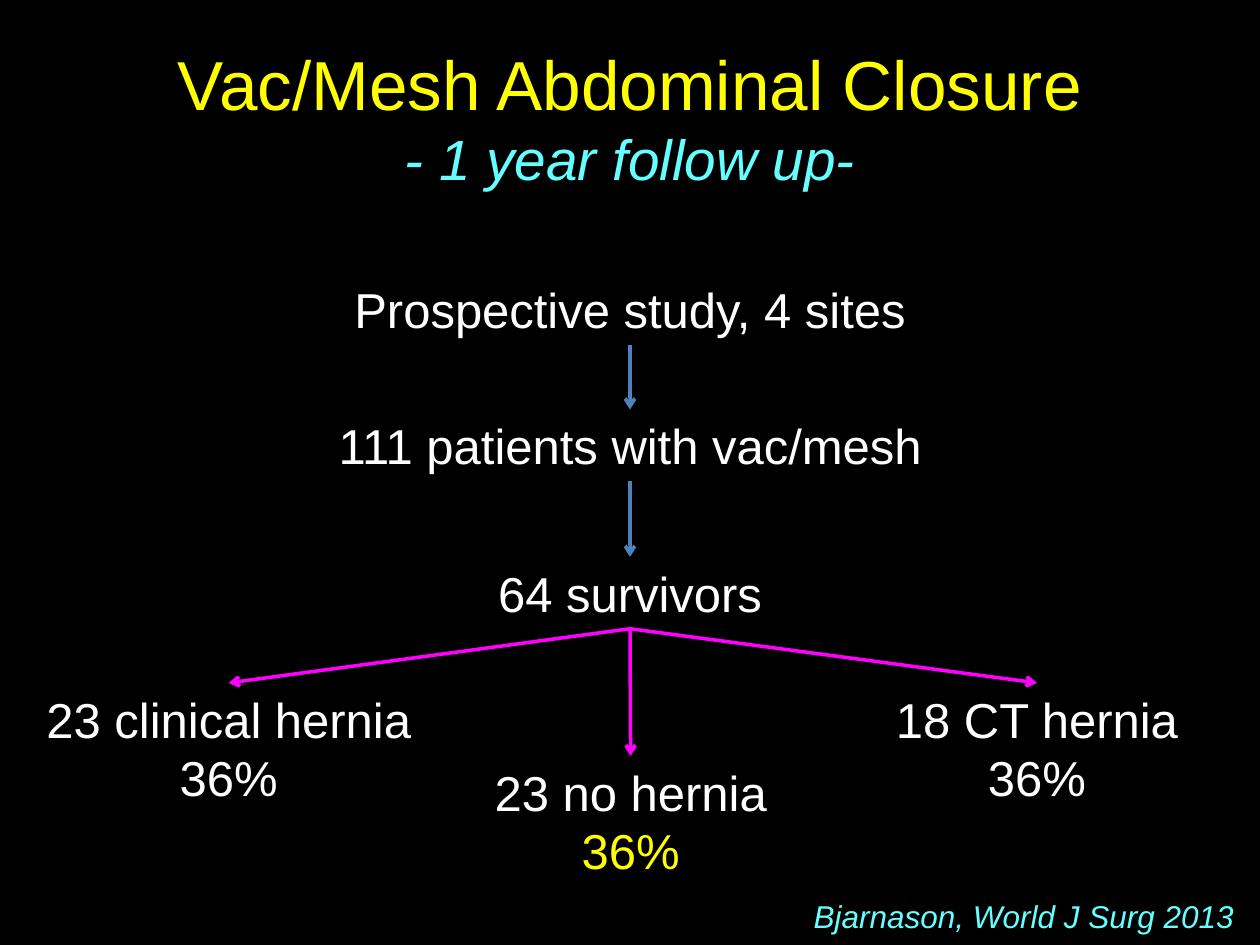
from dataclasses import dataclass

from lxml import etree
from pptx import Presentation
from pptx.dml.color import RGBColor
from pptx.enum import shapes, text
from pptx.oxml import ns
from pptx.util import Inches, Pt

WHITE, YELLOW, CYAN = "FFFFFF", "FFFF00", "66FFFF"
BLUE, MAGENTA = "4F81BD", "FF00FF"
TOP, BOTTOM = 0, 2
CENTER, LEFT = text.PP_ALIGN.CENTER, text.PP_ALIGN.LEFT


@dataclass(frozen=True)
class Run:
    text: str
    size: float = 28
    color: str = WHITE
    italic: bool = False


@dataclass(frozen=True)
class Box:
    left: float
    top: float
    width: float
    height: float
    paragraphs: tuple  # each paragraph is a tuple of runs, one per line
    wrap: bool = True
    align: text.PP_ALIGN = CENTER
    anchor: text.MSO_ANCHOR = text.MSO_ANCHOR.TOP
    auto_size: text.MSO_AUTO_SIZE = text.MSO_AUTO_SIZE.SHAPE_TO_FIT_TEXT


def rgb(color: str) -> RGBColor:
    return RGBColor.from_string(color)


def add_box(s, box: Box):
    sp = s.shapes.add_textbox(Inches(box.left), Inches(box.top),
                              Inches(box.width), Inches(box.height))
    tf = sp.text_frame
    settings = {"word_wrap": box.wrap, "vertical_anchor": box.anchor,
                "auto_size": box.auto_size}
    for name, value in settings.items():
        setattr(tf, name, value)
    for i, runs in enumerate(box.paragraphs):
        p = tf.add_paragraph() if i else tf.paragraphs[0]
        p.alignment = box.align
        for j, run in enumerate(runs):
            if j:
                p.add_line_break()
            r = p.add_run()
            r.text = run.text
            font = {"name": "Arial", "size": Pt(run.size), "italic": run.italic}
            for name, value in font.items():
                setattr(r.font, name, value)
            r.font.color.rgb = rgb(run.color)
    return sp


def add_arrow(s, start, end, color: str) -> None:
    """Join the bottom of one box to the top of another."""
    c = s.shapes.add_connector(shapes.MSO_CONNECTOR.STRAIGHT, 0, 0, 0, 0)
    c.begin_connect(start, BOTTOM)
    c.end_connect(end, TOP)
    c.line.color.rgb = rgb(color)
    c.line.width = Pt(2)
    etree.SubElement(c.line._get_or_add_ln(), ns.qn("a:tailEnd"), type="arrow")
    etree.SubElement(c._element.spPr, ns.qn("a:effectLst"))


def step(top: float, label: str) -> Box:
    return Box(0, top, 10, 0.57, ((Run(label),),))


def outcome(left: float, top: float, width: float, label: str,
            color: str = WHITE) -> Box:
    return Box(left, top, width, 1.04,
               ((Run(label),), (Run("36%", color=color),)), wrap=False)


TITLE = Box(0.5, 0.3, 9, 1.25,
            ((Run("Vac/Mesh Abdominal Closure", 39.6, YELLOW),
              Run("- 1 year follow up-", 32.4, CYAN, True)),),
            anchor=text.MSO_ANCHOR.MIDDLE, auto_size=text.MSO_AUTO_SIZE.NONE)
CITATION = Box(6.36, 7.07, 3.63, 0.4,
               ((Run("Bjarnason, World J Surg 2013", 18, CYAN, True),),),
               wrap=False, align=LEFT)
STEPS = (
    step(2.17, "Prospective study, 4 sites"),
    step(3.25, "111 patients with vac/mesh"),
    step(4.42, "64 survivors"),
)
OUTCOMES = (
    outcome(0.25, 5.42, 3.13, "23 clinical hernia"),
    outcome(3.81, 6, 2.39, "23 no hernia", YELLOW),
    outcome(7, 5.42, 2.46, "18 CT hernia"),
)


def main() -> None:
    prs = Presentation()
    prs.slide_width, prs.slide_height = Inches(10), Inches(7.5)
    s = prs.slides.add_slide(prs.slide_layouts[6])
    s.background.fill.solid()
    s.background.fill.fore_color.rgb = rgb("000000")

    # Title and citation
    add_box(s, TITLE)
    add_box(s, CITATION)

    # Patient flow from study to survivors
    steps = [add_box(s, box) for box in STEPS]
    for start, end in zip(steps, steps[1:]):
        add_arrow(s, start, end, BLUE)

    # Outcomes among the survivors
    for box in OUTCOMES:
        add_arrow(s, steps[-1], add_box(s, box), MAGENTA)

    prs.save("out.pptx")


if __name__ == "__main__":
    main()
